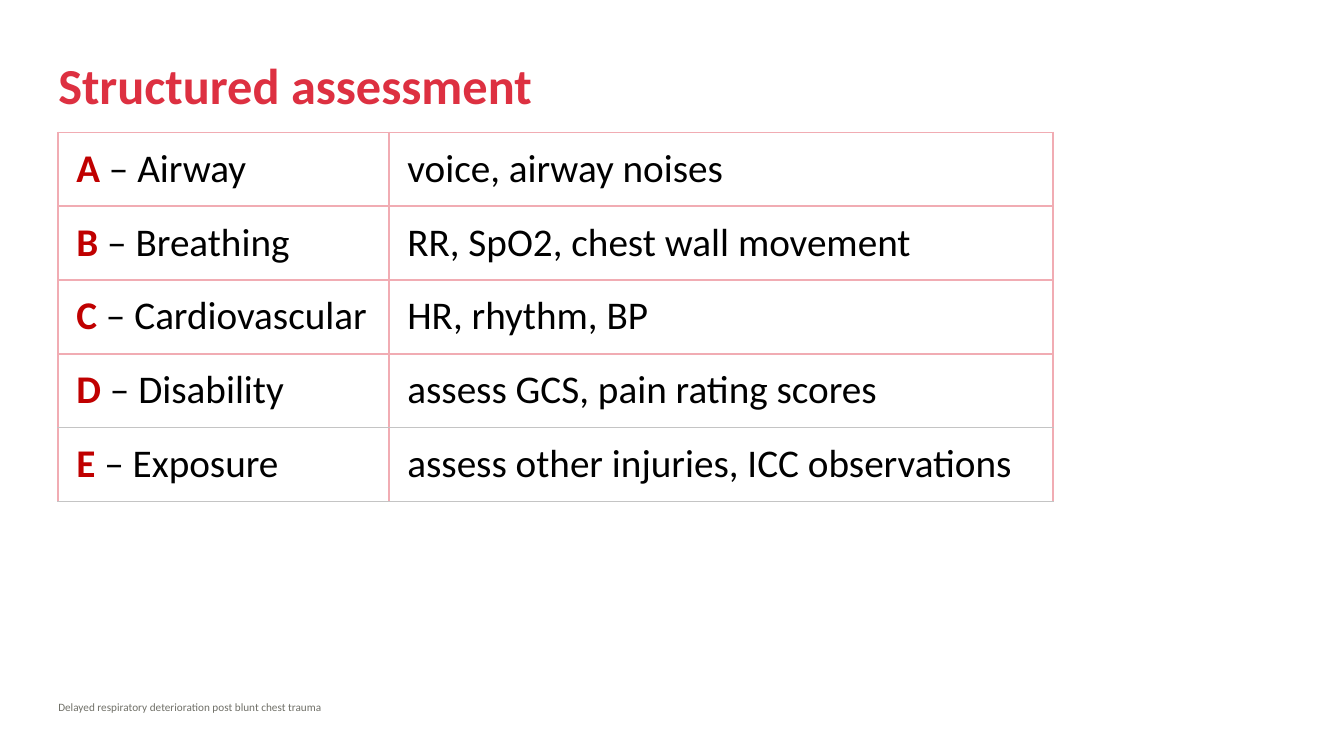
from lxml.etree import SubElement
from pptx import Presentation
from pptx.dml.color import RGBColor
from pptx.enum.text import MSO_ANCHOR as Anchor, MSO_AUTO_SIZE as AutoSize, PP_ALIGN as Align
from pptx.oxml.ns import qn
from pptx.util import Pt

TITLE = "Structured assessment"
FOOTER = "Delayed respiratory deterioration post blunt chest trauma"
ASSESSMENT = [
    ("A", "Airway", "voice, airway noises"),
    ("B", "Breathing", "RR, SpO2, chest wall movement"),
    ("C", "Cardiovascular", "HR, rhythm, BP"),
    ("D", "Disability", "assess GCS, pain rating scores"),
    ("E", "Exposure", "assess other injuries, ICC observations"),
]
COLORS = {
    "title": "DD3041",
    "letter": "C00000",
    "text": "000000",
    "footer": "707068",
    "border": "F1ACB3",
    "thin border": "C4C4C4",
}
LEFT = 41.6
TABLE_TOP = 94.6
COLUMN_WIDTHS = (236.4, 474.4)
ROW_HEIGHT = 52.7
THICK_ROWS = 3  # rows closed by a pink rule; the others have a thin grey one


def add_run(paragraph, text, size=28, color="text", bold=False):
    run = paragraph.add_run()
    run.text = text
    run.font.name = "Calibri"
    run.font.size = Pt(size)
    run.font.bold = bold
    run.font.color.rgb = RGBColor.from_string(COLORS[color])


def set_frame(frame, anchor, margins):
    frame.word_wrap = True
    frame.auto_size = AutoSize.NONE
    frame.vertical_anchor = anchor
    (frame.margin_left, frame.margin_top,
     frame.margin_right, frame.margin_bottom) = map(Pt, margins)


def set_border(cell, side, color, width):
    line = SubElement(cell._tc.get_or_add_tcPr(), qn(f"a:ln{side}"), w=str(Pt(width)))
    fill = SubElement(line, qn("a:solidFill"))
    SubElement(fill, qn("a:srgbClr"), val=COLORS[color])


def rule_style(rows_above):
    """Colour and width of the horizontal rule below that many rows."""
    return ("border", 1.5) if rows_above <= THICK_ROWS else ("thin border", 0.75)


def add_assessment_table(slide):
    frame = slide.shapes.add_table(
        len(ASSESSMENT), len(COLUMN_WIDTHS), Pt(LEFT), Pt(TABLE_TOP),
        Pt(sum(COLUMN_WIDTHS)), Pt(ROW_HEIGHT * len(ASSESSMENT)))
    table = frame.table
    table.first_row = table.horz_banding = False
    for column, width in zip(table.columns, COLUMN_WIDTHS):
        column.width = Pt(width)
    for index, (letter, name, checks) in enumerate(ASSESSMENT):
        table.rows[index].height = Pt(ROW_HEIGHT)
        name_cell, checks_cell = table.rows[index].cells
        for cell in (name_cell, checks_cell):
            cell.margin_left = cell.margin_right = Pt(13)
            cell.margin_top = cell.margin_bottom = Pt(9)
            set_border(cell, "L", "border", 1.5)
            set_border(cell, "R", "border", 1.5)
            set_border(cell, "T", *rule_style(index))
            set_border(cell, "B", *rule_style(index + 1))
            cell.fill.background()
        name_paragraph = name_cell.text_frame.paragraphs[0]
        add_run(name_paragraph, letter, color="letter", bold=True)
        add_run(name_paragraph, f" – {name}")
        add_run(checks_cell.text_frame.paragraphs[0], checks)


def main():
    presentation = Presentation()
    presentation.slide_width, presentation.slide_height = Pt(960), Pt(540)
    slide = presentation.slides.add_slide(presentation.slide_layouts[5])

    title = slide.shapes.title
    title.left, title.top, title.width, title.height = map(Pt, (LEFT, 20.9, 877, 61.2))
    set_frame(title.text_frame, Anchor.BOTTOM, (0, 0, 0, 0))
    title_paragraph = title.text_frame.paragraphs[0]
    title_paragraph.alignment = Align.LEFT
    add_run(title_paragraph, TITLE, size=36, color="title", bold=True)

    add_assessment_table(slide)

    footer = slide.shapes.add_textbox(Pt(LEFT), Pt(496.8), Pt(733.7), Pt(17.3))
    set_frame(footer.text_frame, Anchor.TOP, (0, 3.6, 7.2, 3.6))
    add_run(footer.text_frame.paragraphs[0], FOOTER, size=8, color="footer")

    presentation.save("out.pptx")


if __name__ == "__main__":
    main()
